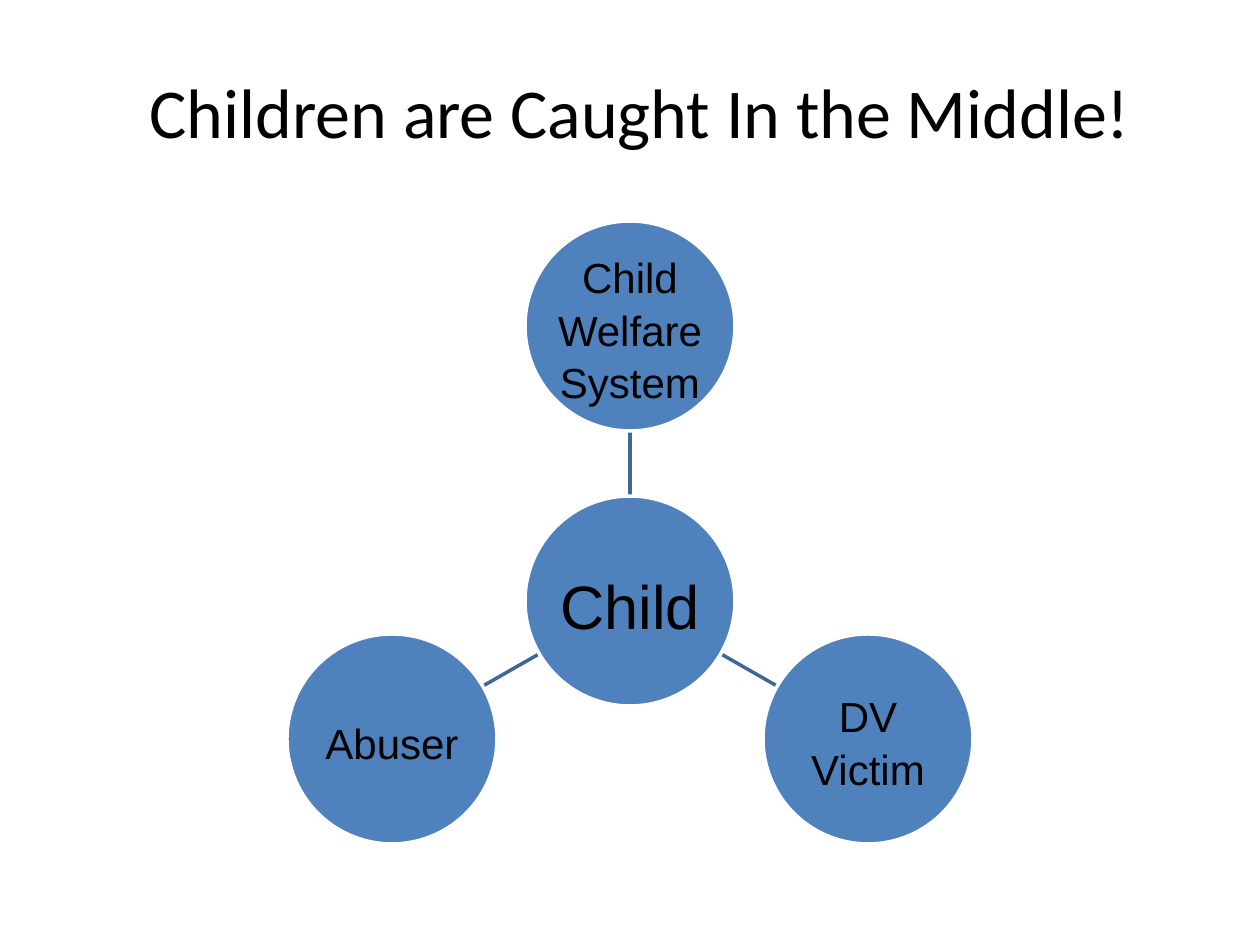
from math import cos, radians, sin

from lxml import etree
from pptx import Presentation
from pptx.dml.color import RGBColor
from pptx.enum.shapes import MSO_CONNECTOR, MSO_SHAPE
from pptx.enum.text import MSO_ANCHOR, PP_ALIGN
from pptx.oxml.ns import qn
from pptx.util import Pt

PX = 914400 // 126
STRAIGHT, OVAL = MSO_CONNECTOR.STRAIGHT, MSO_SHAPE.OVAL
CENTER, MIDDLE = PP_ALIGN.CENTER, MSO_ANCHOR.MIDDLE
COLORS = {"text": "000000", "circle": "4F81BD", "outline": "FFFFFF", "spoke": "3F6797"}
DIAMETER, ORBIT = 210, 275
# Angle in degrees clockwise from the right, and label
SATELLITES = [(-90, "Child Welfare System"), (30, "DV\nVictim"), (150, "Abuser")]


def px(value):
    return round(value) * PX


def color(name):
    return RGBColor.from_string(COLORS[name])


def write(frame, text, size, font="Arial", spacing=1.0, insets=(2, 2, 2, 2)):
    frame.word_wrap = True
    frame.vertical_anchor = MIDDLE
    frame.margin_left, frame.margin_top, frame.margin_right, frame.margin_bottom = map(px, insets)
    for index, line in enumerate(text.split("\n")):
        para = frame.add_paragraph() if index else frame.paragraphs[0]
        para.alignment = CENTER
        para.line_spacing = spacing
        span = para.add_run()
        span.text = line
        span.font.name = font
        span.font.size = Pt(size)
        span.font.color.rgb = color("text")


def add_title(page, left, top, width, height):
    box = page.shapes.add_textbox(px(left), px(top), px(width), px(height))
    write(box.text_frame, "Children are Caught In the Middle!", 40, font="Calibri")


def add_circle(page, x, y, text, size):
    circle = page.shapes.add_shape(
        OVAL, px(x - DIAMETER / 2), px(y - DIAMETER / 2), px(DIAMETER), px(DIAMETER))
    circle.shadow.inherit = False
    circle.fill.solid()
    circle.fill.fore_color.rgb = color("circle")
    circle.line.color.rgb = color("outline")
    circle.line.width = Pt(2)
    write(circle.text_frame, text, size, spacing=1.05, insets=(2, 6, 2, 2))


def add_spoke(page, start, end):
    spoke = page.shapes.add_connector(STRAIGHT, *map(px, start + end))
    spoke.line.color.rgb = color("spoke")
    spoke.line.width = Pt(2)
    etree.SubElement(spoke._element.spPr, qn("a:effectLst"))


def add_radial_diagram(page, center_x, center_y):
    def point(angle, distance):
        return (center_x + distance * cos(radians(angle)),
                center_y + distance * sin(radians(angle)))

    # Spokes lie behind the circles and fill the gaps between them
    for angle, _ in SATELLITES:
        add_spoke(page, point(angle, DIAMETER / 2), point(angle, ORBIT - DIAMETER / 2))
    add_circle(page, center_x, center_y, "Child", 35)
    for angle, text in SATELLITES:
        add_circle(page, *point(angle, ORBIT), text, 24)


def main():
    deck = Presentation()
    deck.slide_width, deck.slide_height = px(1260), px(945)
    page = deck.slides.add_slide(deck.slide_layouts[6])
    add_title(page, 73, 32, 1134, 158)
    add_radial_diagram(page, 630, 601)
    deck.save("out.pptx")


if __name__ == "__main__":
    main()
